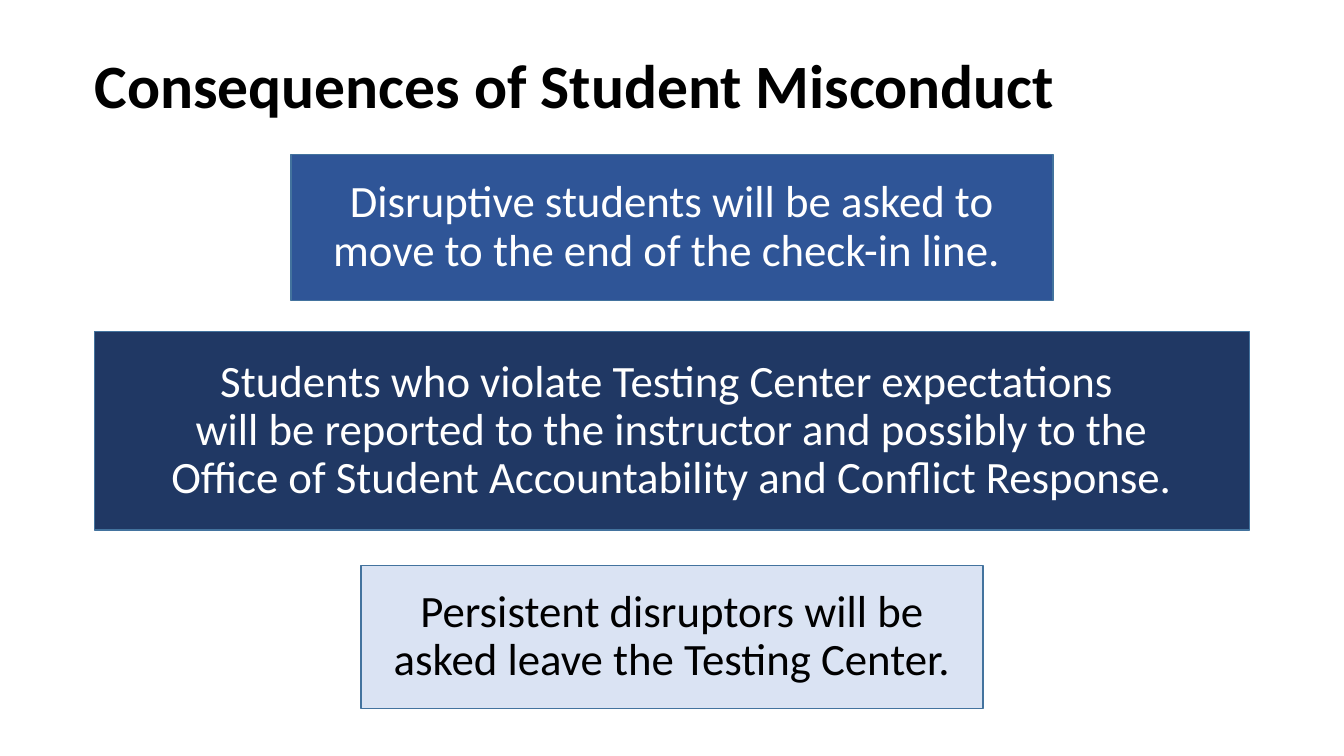
from pptx import Presentation
from pptx.dml.color import RGBColor
from pptx.enum.shapes import MSO_SHAPE
from pptx.enum.text import MSO_ANCHOR, MSO_AUTO_SIZE, PP_ALIGN
from pptx.util import Inches, Pt

WIDTH, HEIGHT = 13.33, 7.5
COLOURS = {
    "blue": "2F5597",
    "navy": "203864",
    "pale": "DAE3F3",
    "outline": "43739E",
    "white": "FFFFFF",
    "black": "000000",
}
TITLE_FONT = {"name": "Calibri", "size": Pt(44), "bold": True}
BODY_FONT = {"name": "Calibri", "size": Pt(32), "bold": False}
BODY_PARAGRAPH = {"alignment": PP_ALIGN.CENTER, "line_spacing": 0.9}
TITLE_FRAME = {"word_wrap": True, "auto_size": MSO_AUTO_SIZE.SHAPE_TO_FIT_TEXT}
BODY_FRAME = {"word_wrap": True, "vertical_anchor": MSO_ANCHOR.MIDDLE}

# Top, width, height (inches), fill, text colour, text; \v breaks a line
CONSEQUENCES = [
    (1.53, 7.56, 1.45, "blue", "white",
     "Disruptive students will be asked to move to the end of the check-in line. "),
    (3.29, 11.45, 1.97, "navy", "white",
     "Students who violate Testing Center expectations \n"
     "will be reported to the instructor and possibly to the\v"
     "Office of Student Accountability and Conflict Response."),
    (5.61, 6.17, 1.42, "pale", "black",
     "Persistent disruptors will be asked leave the Testing Center."),
]


def colour(name):
    return RGBColor.from_string(COLOURS[name])


def apply(target, values):
    for name, value in values.items():
        setattr(target, name, value)


def write_text(box, text, frame_format, paragraph_format, font_format, font_colour):
    frame = box.text_frame
    apply(frame, frame_format)
    frame.text = text
    for para in frame.paragraphs:
        apply(para, paragraph_format)
        for span in para.runs:
            apply(span.font, font_format)
            span.font.color.rgb = colour(font_colour)


def add_title(page, text):
    box = page.shapes.add_textbox(Inches(0.84), Inches(0.42), Inches(11.79), Inches(0.84))
    write_text(box, text, TITLE_FRAME, {}, TITLE_FONT, "black")


def add_consequence(page, top, width, height, fill, font_colour, text):
    """Draw a filled box centred across the slide."""
    left = (WIDTH - width) / 2
    box = page.shapes.add_shape(
        MSO_SHAPE.RECTANGLE, Inches(left), Inches(top), Inches(width), Inches(height))
    box.shadow.inherit = False
    box.fill.solid()
    box.fill.fore_color.rgb = colour(fill)
    box.line.color.rgb = colour("outline")
    box.line.width = Pt(1)
    write_text(box, text, BODY_FRAME, BODY_PARAGRAPH, BODY_FONT, font_colour)


def main():
    deck = Presentation()
    apply(deck, {"slide_width": Inches(WIDTH), "slide_height": Inches(HEIGHT)})
    page = deck.slides.add_slide(deck.slide_layouts[6])
    for consequence in CONSEQUENCES:
        add_consequence(page, *consequence)
    add_title(page, "Consequences of Student Misconduct")
    deck.save("out.pptx")


if __name__ == "__main__":
    main()
